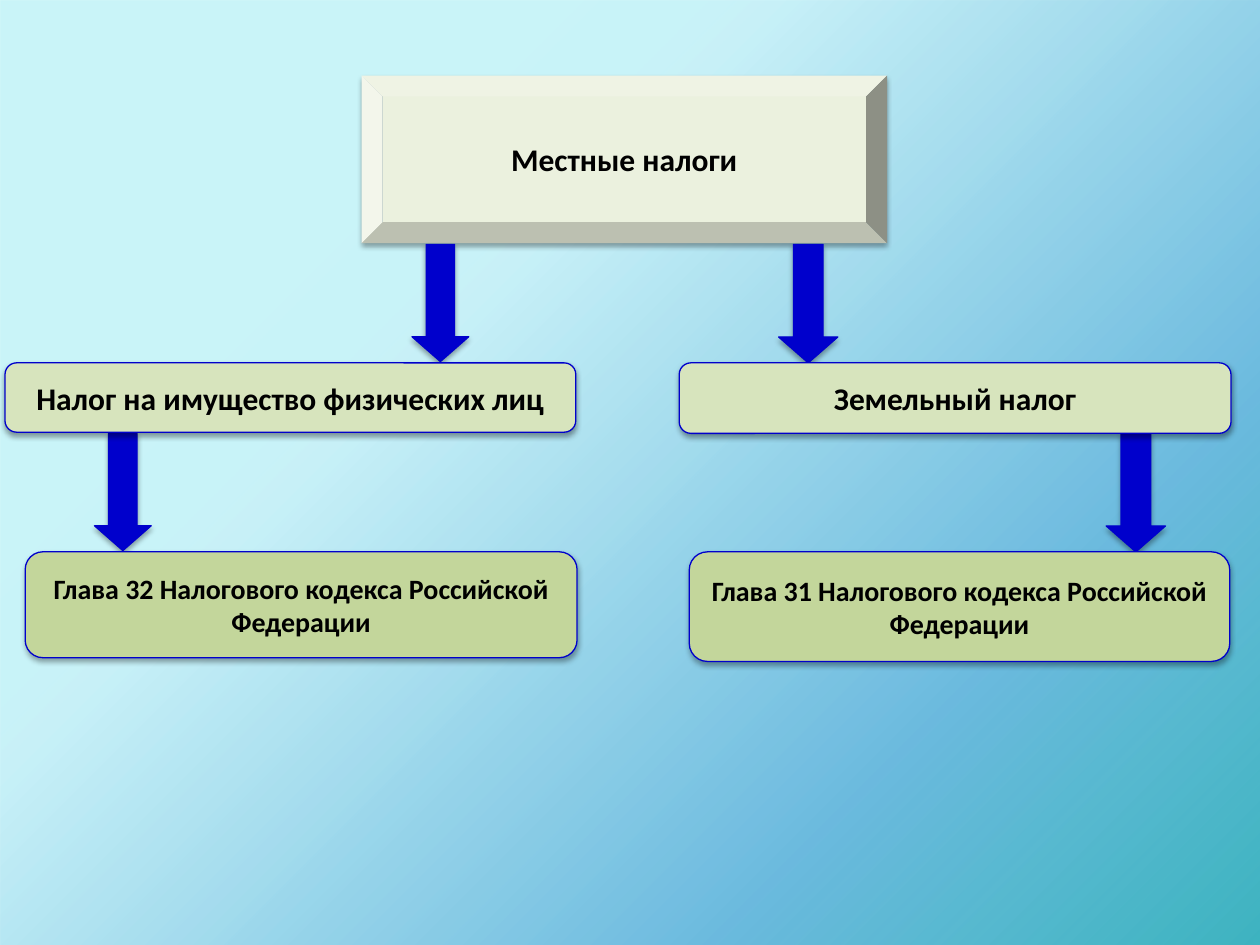
from lxml.etree import SubElement
from pptx import Presentation
from pptx.dml.color import RGBColor
from pptx.enum.shapes import MSO_SHAPE
from pptx.enum.text import MSO_ANCHOR, PP_ALIGN
from pptx.oxml.ns import qn
from pptx.util import Inches, Pt

COLUMNS, ROWS = 100, 75
WIDTH, HEIGHT = Inches(10), Inches(7.5)
COLORS = {
    "heading": "EBF1DE", "tax": "D7E4BD", "chapter": "C3D69B",
    "blue": "0000CC", "text": "000000", "shadow": "000000",
}
BACKDROP = [(0, "FFFFFF", 100), (35, "FFFFFF", 100), (100, "4BACC6", 100)]
VEIL = [(25, "21D6E0", 23), (75, "0087E6", 25), (100, "03D4A8", 18), (100, "005CBF", 26)]
BRANCHES = [
    {"tax": ("Налог на имущество физических лиц", (0.4, 28.8, 45.3, 5.5)),
     "chapter": ("Глава 32 Налогового кодекса Российской Федерации", (2, 43.8, 43.8, 8.4)),
     "arrows": [(32.7, 19.4), (7.5, 34.4)], "arrow_size": (4.5, 9.3)},
    {"tax": ("Земельный налог", (53.9, 28.8, 43.8, 5.6)),
     "chapter": ("Глава 31 Налогового кодекса Российской Федерации", (54.7, 43.8, 42.9, 8.7)),
     "arrows": [(61.8, 19.4), (87.8, 34.4)], "arrow_size": (4.7, 9.4)},
]


def add_color(parent, color, opacity):
    """Append a colour of the given opacity, in percent."""
    tint = SubElement(parent, qn("a:srgbClr"), val=color)
    if opacity < 100:
        SubElement(tint, qn("a:alpha"), val=str(opacity * 1000))


def set_gradient(properties, stops):
    """Turn the solid fill of an element into a diagonal gradient."""
    solid = properties.find(qn("a:solidFill"))
    gradient = SubElement(properties, qn("a:gradFill"), rotWithShape="1")
    properties.replace(solid, gradient)
    stop_list = SubElement(gradient, qn("a:gsLst"))
    for position, color, opacity in stops:
        stop = SubElement(stop_list, qn("a:gs"), pos=str(position * 1000))
        add_color(stop, color, opacity)
    SubElement(gradient, qn("a:lin"), ang=str(45 * 60000), scaled="1")


def add_block(slide, kind, cells, fill, outlined=True, opacity=35):
    """Add a filled shape with a soft shadow at a place on the grid."""
    left, top, width, height = cells
    block = slide.shapes.add_shape(
        kind, int(WIDTH * left / COLUMNS), int(HEIGHT * top / ROWS),
        int(WIDTH * width / COLUMNS), int(HEIGHT * height / ROWS))
    block.fill.solid()
    block.fill.fore_color.rgb = RGBColor.from_string(COLORS[fill])
    if outlined:
        block.line.color.rgb = RGBColor.from_string(COLORS["blue"])
        block.line.width = Pt(0.75)
    else:
        block.line.fill.background()
    block.shadow.inherit = False
    if opacity:
        shadow = SubElement(
            block._element.spPr.find(qn("a:effectLst")), qn("a:outerShdw"),
            blurRad=str(Pt(3.1)), dist=str(Pt(1.8)), dir=str(90 * 60000), rotWithShape="0")
        add_color(shadow, COLORS["shadow"], opacity)
    return block


def write_label(block, text, size):
    """Write bold centred text in a shape."""
    frame = block.text_frame
    frame.word_wrap = True
    frame.vertical_anchor = MSO_ANCHOR.MIDDLE
    label = frame.paragraphs[0]
    label.text = text
    label.alignment = PP_ALIGN.CENTER
    for name, value in {"name": "Calibri", "size": Pt(size), "bold": True}.items():
        setattr(label.font, name, value)
    label.font.color.rgb = RGBColor.from_string(COLORS["text"])


def add_arrow(slide, place, size):
    """Add a blue block arrow that points down."""
    arrow = add_block(slide, MSO_SHAPE.DOWN_ARROW, place + size, "blue")
    arrow.adjustments[1] = 0.437


def add_backdrop(slide):
    """Paint the slide background and the translucent veil over it."""
    slide.background.fill.solid()
    set_gradient(slide.element.find(".//" + qn("p:bgPr")), BACKDROP)
    veil = add_block(slide, MSO_SHAPE.RECTANGLE, (0, 0, COLUMNS, ROWS), "heading", False, 0)
    set_gradient(veil._element.spPr, VEIL)


def add_branch(slide, branch):
    """Add a tax, the code chapter below it and the arrows that lead there."""
    for place in branch["arrows"]:
        add_arrow(slide, place, branch["arrow_size"])
    for level, size, opacity in (("tax", 18, 38), ("chapter", 16, 35)):
        text, cells = branch[level]
        box = add_block(slide, MSO_SHAPE.ROUNDED_RECTANGLE, cells, level, opacity=opacity)
        write_label(box, text, size)


def main():
    """Build the slide on local taxes."""
    deck = Presentation()
    deck.slide_width, deck.slide_height = WIDTH, HEIGHT
    slide = deck.slides.add_slide(deck.slide_layouts[6])
    add_backdrop(slide)
    heading = add_block(slide, MSO_SHAPE.BEVEL, (28.7, 6, 41.7, 13.3), "heading", False)
    write_label(heading, "Местные налоги", 18)
    for branch in BRANCHES:
        add_branch(slide, branch)
    deck.save("out.pptx")


if __name__ == "__main__":
    main()
